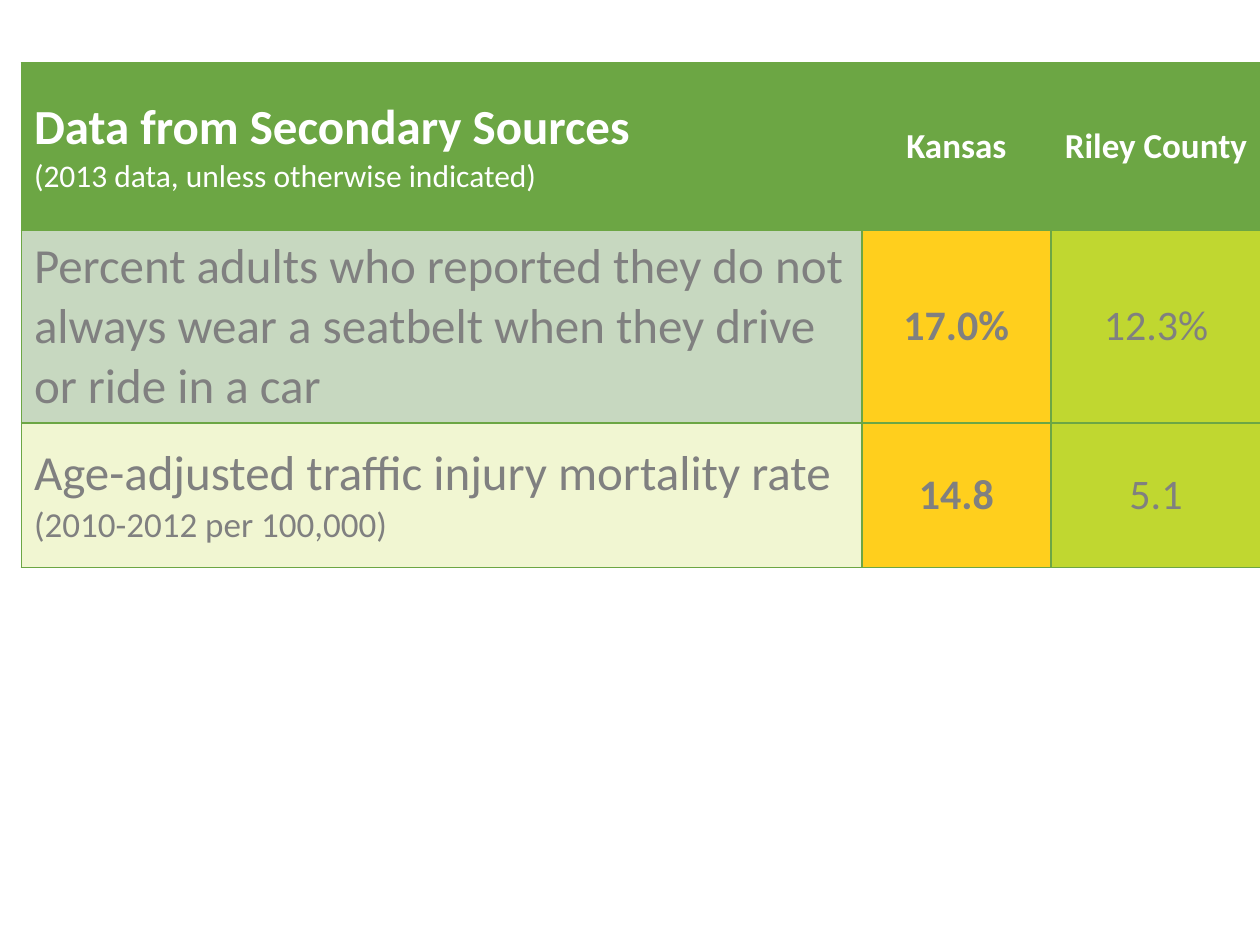
from lxml.etree import SubElement
from pptx import Presentation
from pptx.dml.color import RGBColor
from pptx.enum.text import MSO_ANCHOR, PP_ALIGN
from pptx.oxml.ns import qn
from pptx.util import Inches, Pt

COLORS = {
    "green": "6CA644", "sage": "C7D8C0", "cream": "F1F6D2",
    "yellow": "FFCF1D", "lime": "C0D730", "white": "FFFFFF", "gray": "808080",
}
FORMATS = {
    "title": {"size": Pt(28), "bold": True},
    "subtitle": {"size": Pt(18), "bold": False},
    "heading": {"size": Pt(20), "bold": True},
    "measure": {"size": Pt(28), "bold": False},
    "note": {"size": Pt(20), "bold": False},
    "state": {"size": Pt(24), "bold": True},
    "county": {"size": Pt(24), "bold": False},
}
ROWS = [
    {"height": 1.33, "ink": "white", "fills": ("green", "green", "green"), "cells": [
        [[("Data from Secondary Sources", "title")],
         [("(2013 data, unless otherwise indicated)", "subtitle")]],
        [[("Kansas", "heading")]],
        [[("Riley County", "heading")]],
    ]},
    {"height": 1.07, "ink": "gray", "fills": ("sage", "yellow", "lime"), "cells": [
        [[("Percent adults who reported they do not always wear a seatbelt "
           "when they drive or ride in a car", "measure")]],
        [[("17.0%", "state")]],
        [[("12.3%", "county")]],
    ]},
    {"height": 1.15, "ink": "gray", "fills": ("cream", "yellow", "lime"), "cells": [
        [[("Age-adjusted traffic injury mortality rate ", "measure"),
          ("(2010-2012 per 100,000)", "note")]],
        [[("14.8", "state")]],
        [[("5.1", "county")]],
    ]},
]
COLUMN_WIDTHS = (6.67, 1.5, 1.67)
LEFT, TOP = 0.17, 0.5


def add_borders(cell, color, width):
    properties = cell._tc.get_or_add_tcPr()
    for side in ("lnL", "lnR", "lnT", "lnB"):
        line = SubElement(properties, qn(f"a:{side}"), w=str(Pt(width)))
        fill = SubElement(line, qn("a:solidFill"))
        SubElement(fill, qn("a:srgbClr"), val=color)


def write_cell(cell, paragraphs, ink, alignment):
    cell.vertical_anchor = MSO_ANCHOR.MIDDLE
    frame = cell.text_frame
    for number, spans in enumerate(paragraphs):
        para = frame.add_paragraph() if number else frame.paragraphs[0]
        para.alignment = alignment
        for text, style in spans:
            span = para.add_run()
            span.text = text
            span.font.color.rgb = RGBColor.from_string(COLORS[ink])
            for name, value in {"name": "Calibri", **FORMATS[style]}.items():
                setattr(span.font, name, value)


def main():
    """Build the traffic safety data table slide."""
    deck = Presentation()
    deck.slide_width, deck.slide_height = Inches(10), Inches(7.5)
    page = deck.slides.add_slide(deck.slide_layouts[6])
    table = page.shapes.add_table(
        len(ROWS), len(COLUMN_WIDTHS), Inches(LEFT), Inches(TOP),
        Inches(sum(COLUMN_WIDTHS)), Inches(sum(row["height"] for row in ROWS)),
    ).table
    for column, width in zip(table.columns, COLUMN_WIDTHS):
        column.width = Inches(width)
    for table_row, row in zip(table.rows, ROWS):
        table_row.height = Inches(row["height"])
        contents = zip(table_row.cells, row["cells"], row["fills"])
        for position, (cell, paragraphs, fill) in enumerate(contents):
            add_borders(cell, COLORS["green"], 1)
            cell.fill.solid()
            cell.fill.fore_color.rgb = RGBColor.from_string(COLORS[fill])
            alignment = PP_ALIGN.CENTER if position else PP_ALIGN.LEFT
            write_cell(cell, paragraphs, row["ink"], alignment)
    deck.save("out.pptx")


if __name__ == "__main__":
    main()
